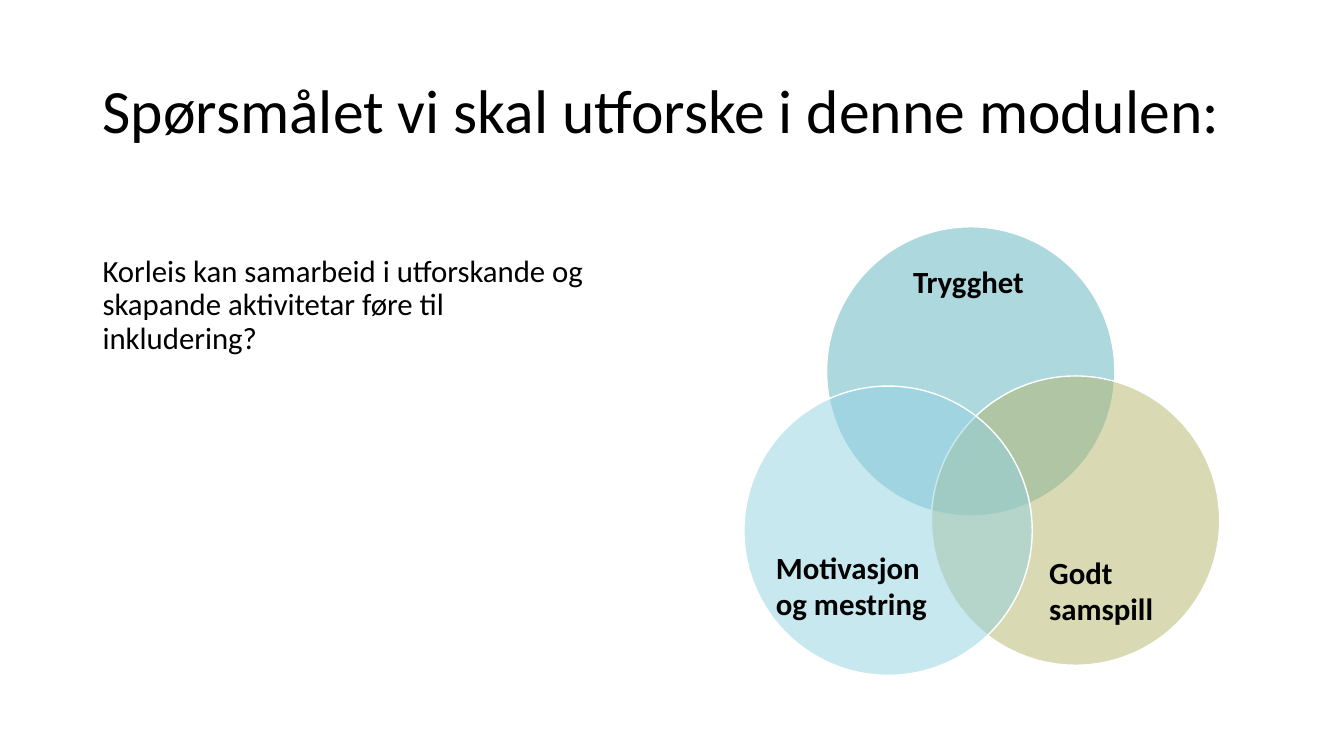
import pptx
import pptx.util
import pptx.dml.color
import pptx.enum.shapes
import pptx.enum.text
import lxml.etree
import pptx.oxml.ns

deck = pptx.Presentation()
deck.slide_width = pptx.util.Inches(13.33)
deck.slide_height = pptx.util.Inches(7.5)
slide = deck.slides.add_slide(deck.slide_layouts[1])
shapes = slide.shapes


def color(code):
    return pptx.dml.color.RGBColor.from_string(code)


def write(shape, text, size, bold=False):
    frame = shape.text_frame
    frame.word_wrap = True
    para = frame.paragraphs[0]
    para.alignment = pptx.enum.text.PP_ALIGN.LEFT
    run = para.add_run()
    run.text = text
    run.font.name = "Calibri"
    run.font.size = pptx.util.Pt(size)
    run.font.bold = bold
    run.font.color.rgb = color("000000")
    return para


wide = deck.slide_width / 100
high = deck.slide_height / 100

title = shapes.title
body = slide.placeholders[1]
heads = [
    (title, (6.88, 5.33, 86.25, 19.33), 44, "Spørsmålet vi skal utforske i denne modulen:"),
    (body, (6.88, 33.2, 37.8, 56.13), 22,
     "Korleis kan samarbeid i utforskande og skapande aktivitetar føre til inkludering?"),
]
for holder, (x, y, w, h), size, text in heads:
    holder.left, holder.top = int(x * wide), int(y * high)
    holder.width, holder.height = int(w * wide), int(h * high)
    holder.text_frame.auto_size = pptx.enum.text.MSO_AUTO_SIZE.NONE
    para = write(holder, text, size)
    para.line_spacing = 0.9

title.text_frame.vertical_anchor = pptx.enum.text.MSO_ANCHOR.MIDDLE
para.space_before = pptx.util.Pt(10)
props = para._p.get_or_add_pPr()
props.set("marL", "0")
props.set("indent", "0")
lxml.etree.SubElement(props, pptx.oxml.ns.qn("a:buNone"))

rings = [
    (61.5, 30, "5DB2BD"),
    (69.3, 49.73, "B4B46B"),
    (55.35, 51.07, "92D2E3"),
]
for x, y, code in rings:
    ring = shapes.add_shape(
        pptx.enum.shapes.MSO_SHAPE.OVAL,
        int(x * wide), int(y * high), int(21.45 * wide), int(38.27 * high))
    ring.shadow.inherit = False
    ring.fill.solid()
    ring.fill.fore_color.rgb = color(code)
    tint = ring.fill._xPr.find(".//" + pptx.oxml.ns.qn("a:srgbClr"))
    lxml.etree.SubElement(tint, pptx.oxml.ns.qn("a:alpha"), val="50000")
    ring.line.color.rgb = color("FFFFFF")
    ring.line.width = pptx.util.Pt(1)

labels = [
    (67.2, 34.13, 11.78, 6.27, "Trygghet"),
    (57, 71.87, 12.9, 11.2, "Motivasjon og mestring"),
    (77.33, 72.53, 11.78, 11.2, "Godt samspill"),
]
for x, y, w, h, text in labels:
    label = shapes.add_textbox(int(x * wide), int(y * high), int(w * wide), int(h * high))
    write(label, text, 22, True)
    label.text_frame.auto_size = pptx.enum.text.MSO_AUTO_SIZE.SHAPE_TO_FIT_TEXT

deck.save("out.pptx")
